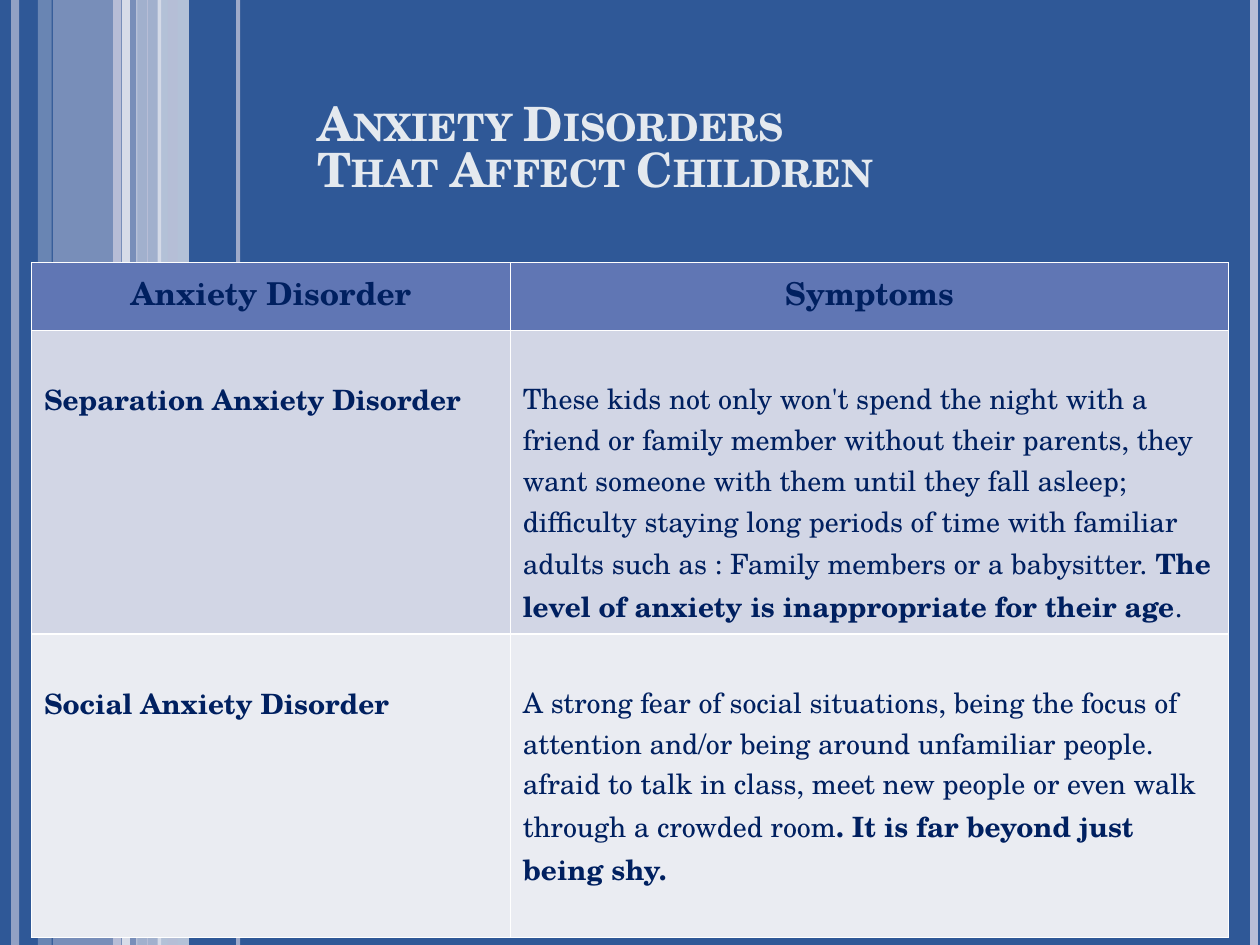
"""Build a slide with a striped backdrop, a title and a table of anxiety disorders."""
from lxml.etree import SubElement
from pptx import Presentation
from pptx.dml.color import RGBColor
from pptx.enum.shapes import MSO_CONNECTOR, MSO_SHAPE
from pptx.enum.text import MSO_ANCHOR, PP_ALIGN
from pptx.oxml.ns import qn
from pptx.util import Inches, Pt

FONT = "TeX Gyre Schola"
NAVY, BLUE, LILAC, MIST, PALE = "002060", "6076B4", "B7BDD6", "D2D6E5", "EAECF2"


def paint(fill, tint, share=100):
    fill.solid()
    fill.fore_color.rgb = RGBColor.from_string(tint)
    if share < 100:
        node = fill._xPr.find(qn("a:solidFill"))[0]
        SubElement(node, qn("a:alpha"), val=str(share * 1000))


def write(para, text, size, bold, tint):
    run = para.add_run()
    run.text = text
    run.font.name = FONT
    run.font.size = Pt(size)
    run.font.bold = bold
    paint(run.font.fill, tint)
    return run


deck = Presentation()
deck.slide_width, deck.slide_height = Inches(10), Inches(7.5)
col, row = deck.slide_width / 100, deck.slide_height / 100
slide = deck.slides.add_slide(deck.slide_layouts[6])
paint(slide.background.fill, "2F5897")

bands = [
    ("rect", 4.2, 6.7, LILAC, 54),
    ("rect", 3, 1.1, MIST, 36),
    ("rect", 10.8, 2, MIST, 70),
    ("rect", 12.5, 2.5, PALE, 71),
    ("line", 1.2, 4.5, LILAC, 73),
    ("line", 10, 4.5, PALE, 83),
    ("line", 9.3, 4.5, LILAC, 100),
    ("line", 18.9, 2.25, LILAC, 82),
    ("line", 11.7, 0.75, LILAC, 100),
    ("rect", 13.3, 0.8, LILAC, 51),
    ("line", 99.5, 4.5, LILAC, 100),
]
for kind, left, width, tint, share in bands:
    x = int(left * col)
    if kind == "rect":
        band = slide.shapes.add_shape(
            MSO_SHAPE.RECTANGLE, x, 0, int(width * col), deck.slide_height)
        band.shadow.inherit = False
        band.line.fill.background()
        paint(band.fill, tint, share)
    else:
        band = slide.shapes.add_connector(
            MSO_CONNECTOR.STRAIGHT, x, 0, x, deck.slide_height)
        band.line.width = Pt(width)
        paint(band.line.fill, tint, share)
        SubElement(band._element.spPr, qn("a:effectLst"))

title = slide.shapes.add_textbox(
    int(24.2 * col), int(11.11 * row), int(67.5 * col), int(15.56 * row))
frame = title.text_frame
frame.word_wrap = True
frame.vertical_anchor = MSO_ANCHOR.BOTTOM
frame.margin_bottom = int(5.87 * row)
for spot, text in enumerate(["Anxiety Disorders", "That Affect Children"]):
    para = frame.add_paragraph() if spot else frame.paragraphs[0]
    para.line_spacing = 0.81
    run = write(para, text, 27, True, "E4E9EF")
    run._r.get_or_add_rPr().set("cap", "small")

cells = [
    [[("Anxiety Disorder", True)], [("Symptoms", True)]],
    [[("Separation Anxiety Disorder", True)],
     [("These kids not only won't spend the night with a friend or family member "
       "without their parents, they want someone with them until they fall asleep; "
       "difficulty staying long periods of time with familiar adults such as : "
       "Family members or a babysitter. ", False),
      ("The level of anxiety is inappropriate for their age", True),
      (".", False)]],
    [[("Social Anxiety Disorder", True)],
     [("A strong fear of social situations, being the focus of attention and/or "
       "being around unfamiliar people. afraid to talk in class, meet new people or "
       "even walk through a crowded room", False),
      (". It is far beyond just being shy.", True)]],
]
widths, heights = [38, 57], [7.2, 32.13, 32.13]
grid = slide.shapes.add_table(
    3, 2, int(2.5 * col), int(27.78 * row),
    int(sum(widths) * col), int(sum(heights) * row)).table
for part, width in zip(grid.columns, widths):
    part.width = int(width * col)
for part, height in zip(grid.rows, heights):
    part.height = int(height * row)

for r, (line, tint) in enumerate(zip(cells, [BLUE, MIST, PALE])):
    for c, runs in enumerate(line):
        cell = grid.cell(r, c)
        edges = cell._tc.get_or_add_tcPr()
        for side in "LRTB":
            edge = SubElement(edges, qn(f"a:ln{side}"), w=str(Pt(1)))
            SubElement(SubElement(edge, qn("a:solidFill")), qn("a:srgbClr"), val="FFFFFF")
        paint(cell.fill, tint)
        para = cell.text_frame.paragraphs[0]
        if r:
            cell.margin_top = int(5 * row)
        else:
            para.alignment = PP_ALIGN.CENTER
        for text, bold in runs:
            write(para, text, 16 if r else 18, bold, NAVY)

deck.save("out.pptx")
